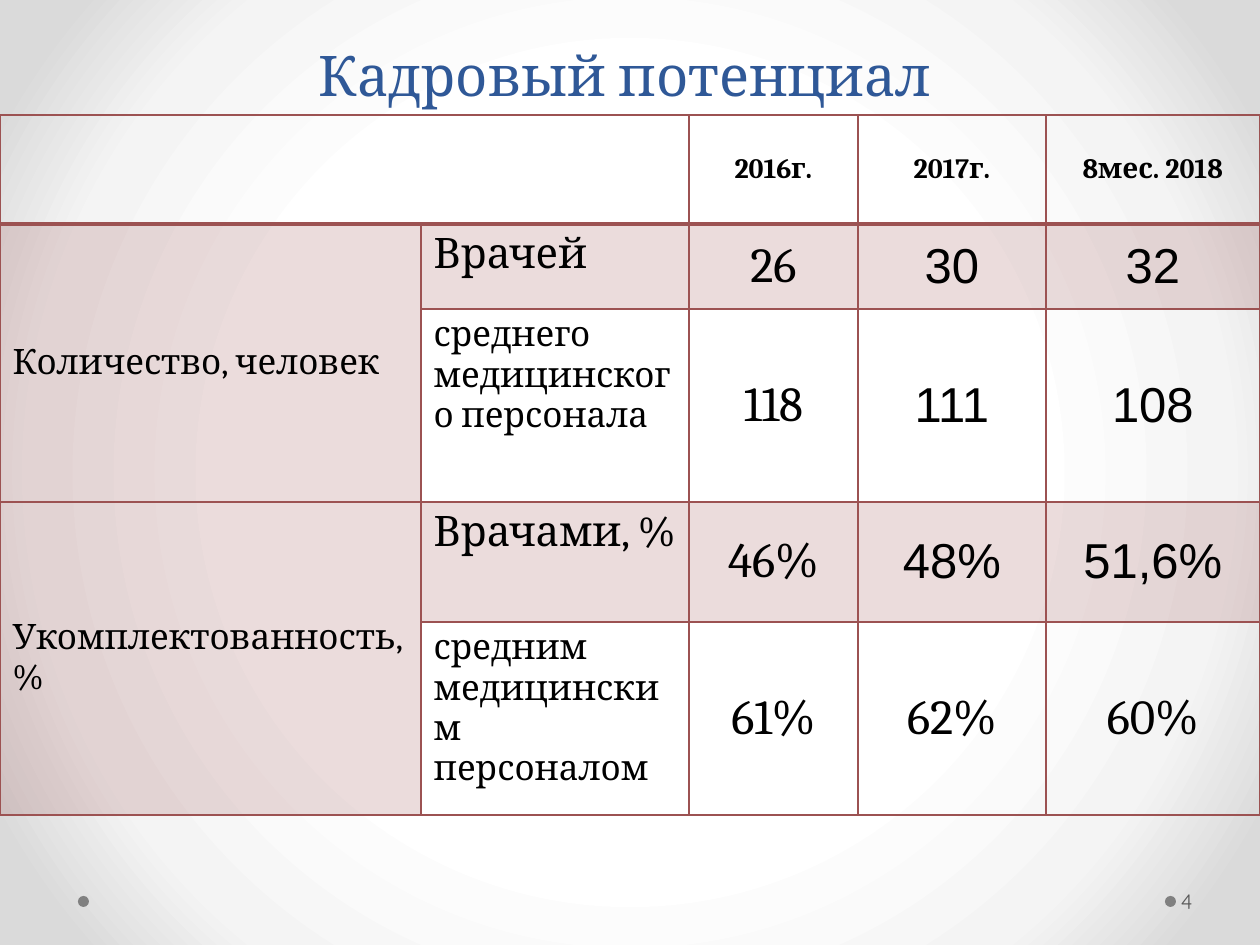
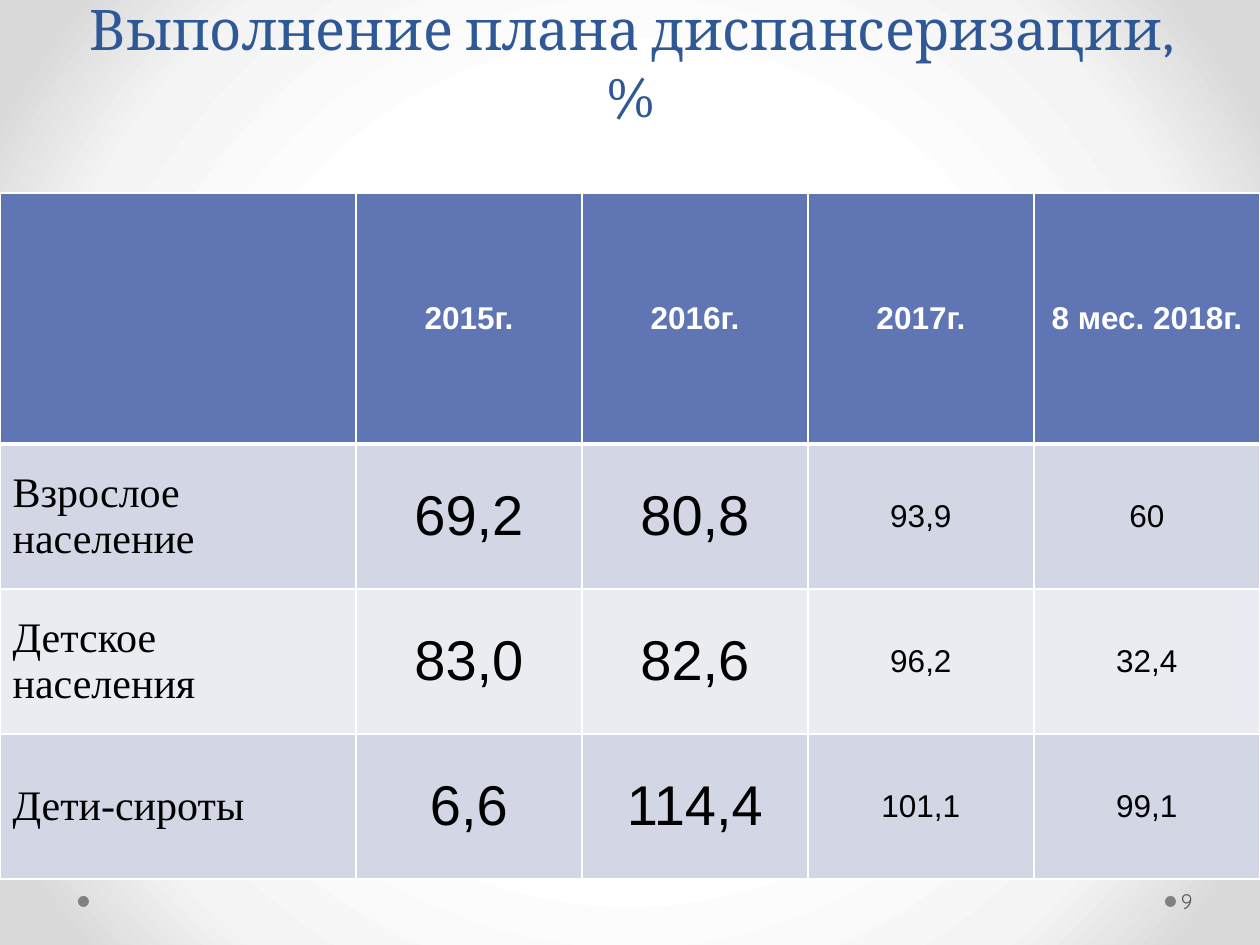
from lxml import etree
from pptx import Presentation
from pptx.dml.color import RGBColor
from pptx.enum.shapes import MSO_SHAPE
from pptx.enum.text import MSO_ANCHOR, PP_ALIGN
from pptx.oxml import parse_xml
from pptx.oxml.ns import nsdecls, qn
from pptx.util import Emu, Pt

PX = 914400 / 126
COLORS = {
    "title": "2F5897", "black": "000000", "white": "FFFFFF", "dot": "808080",
    "number": "595959", "red": "9C5252", "blue": "6076B4",
    "band_dark": "D2D6E5", "band_light": "EAECF2",
}
BACKGROUND_STOPS = [(50, "FFFFFF"), (76, "F4F4F4"), (92, "DADADA")]

# Text styles of the table cells
HEAD_SERIF = dict(font="Cambria", size=16, bold=True, align="center")
HEAD_SANS = dict(font="Arial", size=18, bold=True, align="center", color="white")
GROUP = dict(font="Cambria", size=20)
STAFF_SHORT = dict(font="Cambria", size=24, anchor="top")
STAFF_LONG = dict(GROUP, anchor="top")
SERIF_VALUE = dict(font="Cambria", size=28, align="center")
SANS_VALUE = dict(SERIF_VALUE, font="Arial")
POPULATION = dict(font="Times New Roman", size=24)
BIG_VALUE = dict(font="Arial", size=32, align="center")
SMALL_VALUE = dict(BIG_VALUE, size=18)

MIXED_ROW = [SERIF_VALUE, SANS_VALUE, SANS_VALUE]
PLAN_ROW = [POPULATION, BIG_VALUE, BIG_VALUE, SMALL_VALUE, SMALL_VALUE]

SLIDES = [
    dict(
        title="Кадровый потенциал ", title_box=(64, 36, 1134, 78), title_spacing=58,
        number="4", top=115,
        cols=[421, 268, 169, 188, 214], rows=[109, 85, 193, 120, 193],
        line="red", head_line=2,
        merges=[(0, 0, 0, 1), (1, 0, 2, 0), (3, 0, 4, 0)],
        cells=[
            ["", "", "2016г.", "2017г.", "8мес. 2018"],
            ["Количество, человек", "Врачей", "26", "30", "32"],
            ["", "среднего медицинского персонала", "118", "111", "108"],
            ["Укомплектованность,%", "Врачами, %", "46%", "48%", "51,6%"],
            ["", "средним медицинским персоналом", "61%", "62%", "60%"],
        ],
        styles=[
            [HEAD_SERIF] * 5,
            [GROUP, STAFF_SHORT] + MIXED_ROW,
            [GROUP, STAFF_LONG] + MIXED_ROW,
            [GROUP, STAFF_SHORT] + MIXED_ROW,
            [GROUP, STAFF_LONG] + [SERIF_VALUE] * 3,
        ],
        fills=[None, "red", None, "red", None], fill_alpha=20,
    ),
    dict(
        title="Выполнение плана диспансеризации, %", title_box=(64, 35, 1134, 100),
        title_spacing=None,
        number="9", top=193,
        cols=[356] + [226] * 4, rows=[251] + [145] * 3,
        line="white", head_line=3,
        merges=[],
        cells=[
            ["", "2015г.", "2016г.", "2017г.", "8 мес. 2018г."],
            ["Взрослое население", "69,2", "80,8", "93,9", "60"],
            ["Детское населения", "83,0", "82,6", "96,2", "32,4"],
            ["Дети-сироты", "6,6", "114,4", "101,1", "99,1"],
        ],
        styles=[[HEAD_SANS] * 5] + [PLAN_ROW] * 3,
        fills=["blue", "band_dark", "band_light", "band_dark"], fill_alpha=None,
    ),
]


def px(value):
    return Emu(round(value * PX))


def rgb(name):
    return RGBColor.from_string(COLORS[name])


def write(tf, text, font, size, color="black", bold=False, align="left", spacing=None):
    p = tf.paragraphs[0]
    p.alignment = PP_ALIGN.CENTER if align == "center" else PP_ALIGN.LEFT
    if spacing:
        p.line_spacing = Pt(spacing)
    r = p.add_run()
    r.text = text
    r.font.name, r.font.size, r.font.bold = font, Pt(size), bold
    r.font.color.rgb = rgb(color)


def add_text(s, box, text, anchor, margins=None, **style):
    tf = s.shapes.add_textbox(*map(px, box)).text_frame
    tf.word_wrap = True
    tf.vertical_anchor = anchor
    if margins:
        tf.margin_left, tf.margin_top, tf.margin_right, tf.margin_bottom = map(px, margins)
    write(tf, text, **style)


def set_background(s):
    """Fill the slide with a round gradient that darkens towards the corners."""
    s.background.fill.solid()
    solid = s.element.find(".//" + qn("a:solidFill"))
    stops = "".join(
        f'<a:gs pos="{pos * 1000}"><a:srgbClr val="{color}"/></a:gs>'
        for pos, color in BACKGROUND_STOPS)
    solid.getparent().replace(solid, parse_xml(
        f'<a:gradFill {nsdecls("a")} rotWithShape="1"><a:gsLst>{stops}</a:gsLst>'
        '<a:path path="circle"><a:fillToRect l="50000" t="50000" r="50000" b="50000"/>'
        '</a:path></a:gradFill>'))


def add_footer(s, number):
    for left in (1165, 78):
        dot = s.shapes.add_shape(MSO_SHAPE.OVAL, px(left), px(896), px(11), px(11))
        dot.shadow.inherit = False
        dot.fill.solid()
        dot.fill.fore_color.rgb = rgb("dot")
        dot.line.fill.background()
    add_text(s, (1177, 876, 77, 50), number, MSO_ANCHOR.MIDDLE, margins=(4, 6, 6, 6),
             font="Quicksand", size=12, color="number")


def fill_cell(cell, color, alpha):
    if color is None:
        cell.fill.background()
        return
    cell.fill.solid()
    cell.fill.fore_color.rgb = rgb(color)
    if alpha:
        clr = cell._tc.tcPr.find(".//" + qn("a:srgbClr"))
        etree.SubElement(clr, qn("a:alpha")).set("val", str(alpha * 1000))


def set_borders(cell, color, widths):
    """Draw the left, right, top and bottom lines, with widths in points."""
    for i, (side, width) in enumerate(zip("LRTB", widths)):
        cell._tc.tcPr.insert(i, parse_xml(
            f'<a:ln{side} {nsdecls("a")} w="{Pt(width)}"><a:solidFill>'
            f'<a:srgbClr val="{COLORS[color]}"/></a:solidFill></a:ln{side}>'))


def add_data_table(s, d):
    shape = s.shapes.add_table(len(d["rows"]), len(d["cols"]), 0, px(d["top"]),
                               px(sum(d["cols"])), px(sum(d["rows"])))
    table = shape.table
    table.first_row = table.horz_banding = False
    for col, width in zip(table.columns, d["cols"]):
        col.width = px(width)
    for row, height in zip(table.rows, d["rows"]):
        row.height = px(height)
    for r, (texts, styles) in enumerate(zip(d["cells"], d["styles"])):
        for c, (text, style) in enumerate(zip(texts, styles)):
            cell = table.cell(r, c)
            style = dict(style)
            anchor = style.pop("anchor", "middle")
            cell.vertical_anchor = MSO_ANCHOR.TOP if anchor == "top" else MSO_ANCHOR.MIDDLE
            if text:
                write(cell.text_frame, text, **style)
            fill_cell(cell, d["fills"][r], d["fill_alpha"])
            top = d["head_line"] if r == 1 else 1
            bottom = d["head_line"] if r == 0 else 1
            set_borders(cell, d["line"], (1, 1, top, bottom))
    for r1, c1, r2, c2 in d["merges"]:
        table.cell(r1, c1).merge(table.cell(r2, c2))


def main():
    prs = Presentation()
    prs.slide_width, prs.slide_height = px(1260), px(945)
    for d in SLIDES:
        s = prs.slides.add_slide(prs.slide_layouts[6])
        set_background(s)
        add_text(s, d["title_box"], d["title"], MSO_ANCHOR.BOTTOM, font="Cambria", size=32,
                 color="title", align="center", spacing=d["title_spacing"])
        add_data_table(s, d)
        add_footer(s, d["number"])
    prs.save("out.pptx")


if __name__ == "__main__":
    main()
